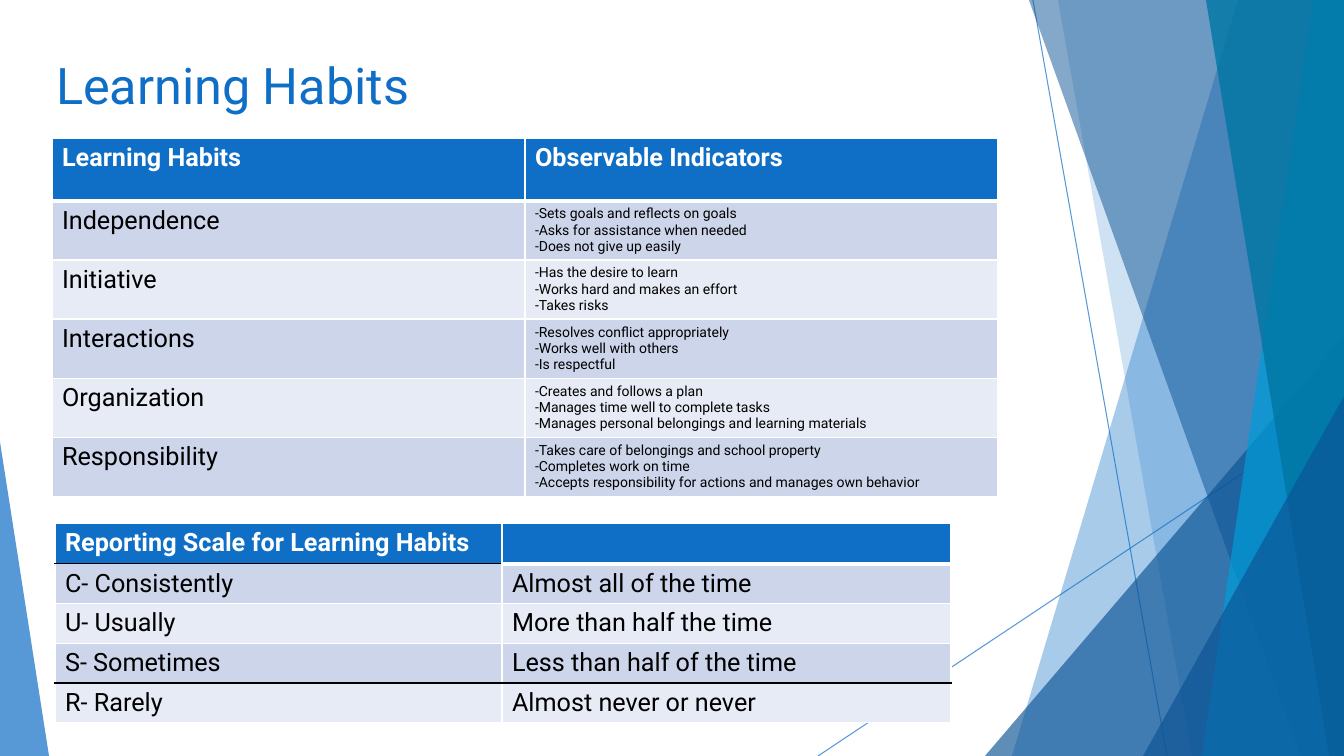
from dataclasses import dataclass
from lxml import etree
from pptx import Presentation
from pptx.dml.color import RGBColor
from pptx.enum.shapes import MSO_CONNECTOR, MSO_SHAPE
from pptx.enum.text import MSO_ANCHOR, PP_ALIGN
from pptx.oxml.ns import qn
from pptx.util import Pt

LINE = MSO_CONNECTOR.STRAIGHT
TRI = MSO_SHAPE.ISOSCELES_TRIANGLE
TOP = MSO_ANCHOR.TOP
LEFT = PP_ALIGN.LEFT


@dataclass(frozen=True)
class Theme:
    font: str = "Roboto"
    blue: str = "0F6FC6"
    navy: str = "0B5394"
    cyan: str = "009DD9"
    teal: str = "0076A3"
    white: str = "FFFFFF"
    black: str = "000000"
    bands: tuple = ("E7EBF5", "CCD5EA")
    title: int = 36
    body: int = 18
    small: int = 10


T = Theme()
WIDE, HIGH = 1344, 756
SCALE = 12192000 / WIDE

TITLE = "Learning Habits"
HABITS = [
    ("Learning Habits", "Observable Indicators"),
    ("Independence", "-Sets goals and reflects on goals\n-Asks for assistance when needed\n-Does not give up easily"),
    ("Initiative", "-Has the desire to learn\n-Works hard and makes an effort\n-Takes risks"),
    ("Interactions", "-Resolves conflict appropriately\n-Works well with others\n-Is respectful"),
    ("Organization", "-Creates and follows a plan\n-Manages time well to complete tasks\n"
     "-Manages personal belongings and learning materials"),
    ("Responsibility", "-Takes care of belongings and school property\n-Completes work on time\n"
     "-Accepts responsibility for actions and manages own behavior"),
]
MARKS = [
    ("Reporting Scale for Learning Habits", ""),
    ("C- Consistently", "Almost all of the time"),
    ("U- Usually", "More than half the time"),
    ("S- Sometimes", "Less than half of the time"),
    ("R- Rarely", "Almost never or never"),
]
THIN, THICK, DARK = (T.white, 1), (T.white, 3), (T.black, 1)
TABLES = [
    dict(rows=HABITS, at=(52, 138), cols=(473, 473), head=63, step=59, sizes=(T.body, T.small),
         rules={(1, 0): THICK, (1, 1): THICK}),
    dict(rows=MARKS, at=(55, 523), cols=(447, 449), head=39, step=39, sizes=(T.body, T.body),
         rules={(1, 0): DARK, (1, 1): THICK, (4, 0): DARK, (4, 1): DARK}),
]
RAYS = [(1033, 0, 1167, HIGH), (WIDE, 406, 818, HIGH)]
SHARDS = [
    ("band", (1238, 1012), T.blue, 36),
    ("band", (1058, 1192), T.blue, 20),
    ("peak", (985, 336, 359, 1), T.navy, 66),
    ("band", (1029, 1301), T.navy, 50),
    ("band", (1313, 1202), T.cyan, 70),
    ("band", (1206, 1329), T.teal, 80),
    ("peak", (1143, 396, 201, 1), T.navy, 66),
    ("peak", (0, 442, 49, 0), T.blue, 70),
]


def px(n):
    return round(n * SCALE)


def rgb(code):
    return RGBColor.from_string(code)


def fade(node, share):
    tint = next(node.iter(qn("a:srgbClr")))
    etree.SubElement(tint, qn("a:alpha"), val=str(share * 1000))


def style(frame, size, color, bold=False):
    for para in frame.paragraphs:
        para.alignment = LEFT
        for run in para.runs:
            font = run.font
            font.name, font.size, font.bold = T.font, Pt(size), bold
            font.color.rgb = rgb(color)


def add_ray(slide, ends):
    ray = slide.shapes.add_connector(LINE, *map(px, ends))
    ray.line.color.rgb = rgb(T.blue)
    ray.line.width = Pt(0.75)
    props = ray._element.spPr
    fade(props, 70)
    etree.SubElement(props, qn("a:effectLst"))


def add_shard(slide, kind, spot, color, share):
    if kind == "band":
        top, base = spot
        pen = slide.shapes.build_freeform(top, 0, scale=SCALE)
        pen.add_line_segments([(WIDE, 0), (WIDE, HIGH), (base, HIGH)], close=True)
        shard = pen.convert_to_shape()
    else:
        x, y, w, apex = spot
        shard = slide.shapes.add_shape(TRI, px(x), px(y), px(w), px(HIGH - y))
        shard.adjustments[0] = apex
    shard.shadow.inherit = False
    shard.fill.solid()
    shard.fill.fore_color.rgb = rgb(color)
    shard.line.fill.background()
    fade(shard._element.spPr, share)


def add_edge(cell, side, rule):
    color, width = rule
    edge = etree.SubElement(cell._tc.get_or_add_tcPr(), qn("a:ln" + side), w=str(Pt(width)))
    fill = etree.SubElement(edge, qn("a:solidFill"))
    etree.SubElement(fill, qn("a:srgbClr"), val=color)


def add_grid(slide, rows, at, cols, head, step, sizes, rules):
    tall = head + step * (len(rows) - 1)
    frame = slide.shapes.add_table(len(rows), len(cols), *map(px, (*at, sum(cols), tall)))
    grid = frame.table
    for c, wide in enumerate(cols):
        grid.columns[c].width = px(wide)
    for r, row in enumerate(rows):
        grid.rows[r].height = px(step if r else head)
        for c, text in enumerate(row):
            cell = grid.cell(r, c)
            cell.text = text
            if r:
                style(cell.text_frame, sizes[c], T.black)
            else:
                style(cell.text_frame, T.body, T.white, True)
            add_edge(cell, "L", THIN)
            add_edge(cell, "R", THIN)
            add_edge(cell, "T", rules.get((r, c), THIN))
            add_edge(cell, "B", rules.get((r + 1, c), THIN))
            cell.fill.solid()
            cell.fill.fore_color.rgb = rgb(T.bands[r % 2] if r else T.blue)


def main():
    deck = Presentation()
    deck.slide_width, deck.slide_height = px(WIDE), px(HIGH)
    slide = deck.slides.add_slide(deck.slide_layouts[5])
    for ray in RAYS:
        add_ray(slide, ray)
    for shard in SHARDS:
        add_shard(slide, *shard)
    for grid in TABLES:
        add_grid(slide, **grid)
    title = slide.shapes.title
    title.left, title.top, title.width, title.height = map(px, (46, 49, 948, 145))
    title.text_frame.text = TITLE
    title.text_frame.vertical_anchor = TOP
    style(title.text_frame, T.title, T.blue)
    deck.save("out.pptx")


if __name__ == "__main__":
    main()
